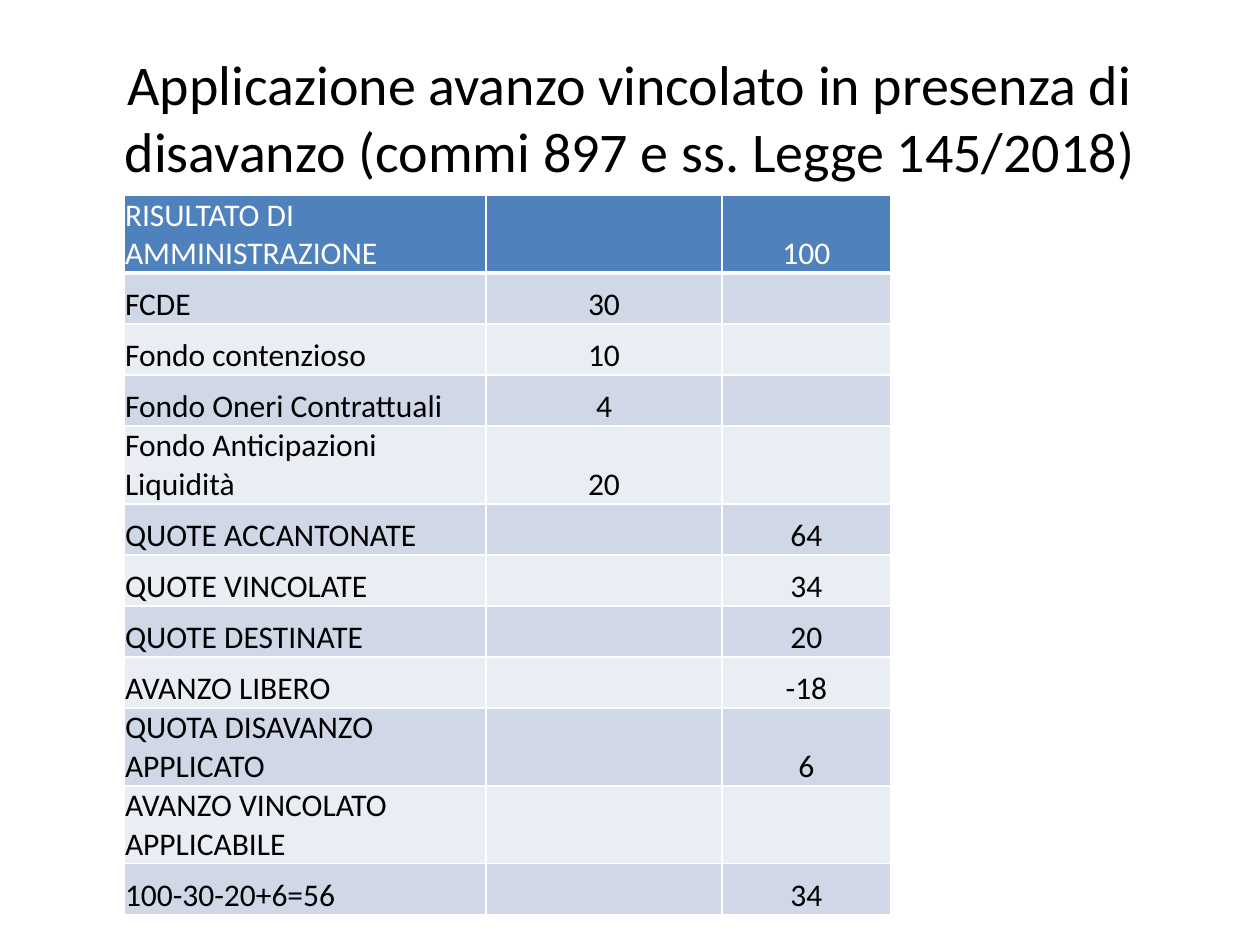
"""Build a slide with a budget surplus table."""
from typing import NamedTuple

from lxml import etree
from pptx import Presentation
from pptx.dml.color import RGBColor
from pptx.enum.text import MSO_ANCHOR, PP_ALIGN
from pptx.oxml.ns import qn
from pptx.util import Emu, Pt

LEFT, CENTER = PP_ALIGN.LEFT, PP_ALIGN.CENTER
MIDDLE, BOTTOM = MSO_ANCHOR.MIDDLE, MSO_ANCHOR.BOTTOM
SCALE = 914400 / 126
FONT = "Calibri"
COLORS = {"head": "4F81BD", "odd": "D0D8E8", "even": "E9EDF4",
          "white": "FFFFFF", "black": "000000"}
TITLE = ("Applicazione avanzo vincolato in presenza di disavanzo "
         "(commi 897 e ss. Legge 145/2018)")
WIDTHS = (362, 236, 169)
ROW = 51


class Item(NamedTuple):
    label: str
    part: str = ""
    total: str = ""


ITEMS = (
    Item("RISULTATO DI AMMINISTRAZIONE", total="100"),
    Item("FCDE", "30"),
    Item("Fondo contenzioso", "10"),
    Item("Fondo Oneri Contrattuali", "4"),
    Item("Fondo Anticipazioni Liquidità", "20"),
    Item("QUOTE ACCANTONATE", total="64"),
    Item("QUOTE VINCOLATE", total="34"),
    Item("QUOTE DESTINATE", total="20"),
    Item("AVANZO LIBERO", total="-18"),
    Item("QUOTA DISAVANZO APPLICATO", total="6"),
    Item("AVANZO VINCOLATO APPLICABILE"),
    Item("100-30-20+6=56", total="34"),
)


def px(count: int) -> Emu:
    return Emu(round(count * SCALE))


def tint(name: str) -> RGBColor:
    return RGBColor.from_string(COLORS[name])


def write(para, text: str, size: int, color: str, align) -> None:
    para.alignment = align
    run = para.add_run()
    run.text = text
    font = run.font
    font.name, font.size, font.bold = FONT, Pt(size), False
    font.color.rgb = tint(color)


def edge(cell, side: str, width: int) -> None:
    line = etree.SubElement(cell._tc.get_or_add_tcPr(), qn(f"a:ln{side}"),
                            w=str(Pt(width)))
    fill = etree.SubElement(line, qn("a:solidFill"))
    etree.SubElement(fill, qn("a:srgbClr"), val=COLORS["white"])


def draw_cell(cell, text: str, row: int, col: int) -> None:
    for side in "LRTB":
        thick = (row, side) in ((0, "B"), (1, "T"))
        edge(cell, side, 3 if thick else 1)
    band = "head" if row == 0 else "odd" if row % 2 else "even"
    cell.fill.solid()
    cell.fill.fore_color.rgb = tint(band)
    cell.margin_left = cell.margin_right = cell.margin_top = px(1)
    cell.margin_bottom = px(0)
    cell.vertical_anchor = BOTTOM
    if text:
        write(cell.text_frame.paragraphs[0], text, 18,
              "black" if row else "white", CENTER if col else LEFT)


def draw_title(shape) -> None:
    shape.left, shape.top = px(63), px(38)
    shape.width, shape.height = px(1134), px(158)
    shape.text_frame.vertical_anchor = MIDDLE
    write(shape.text_frame.paragraphs[0], TITLE, 32, "black", CENTER)


def draw_table(slide) -> None:
    table = slide.shapes.add_table(
        len(ITEMS), len(WIDTHS), px(124), px(195),
        px(sum(WIDTHS)), px(ROW * len(ITEMS))).table
    for col, width in enumerate(WIDTHS):
        table.columns[col].width = px(width)
    for row, item in enumerate(ITEMS):
        table.rows[row].height = px(ROW)
        for col, text in enumerate(item):
            draw_cell(table.cell(row, col), text, row, col)


def main() -> None:
    deck = Presentation()
    deck.slide_width, deck.slide_height = px(1260), px(945)
    slide = deck.slides.add_slide(deck.slide_layouts[5])
    draw_title(slide.shapes.title)
    draw_table(slide)
    deck.save("out.pptx")


if __name__ == "__main__":
    main()
